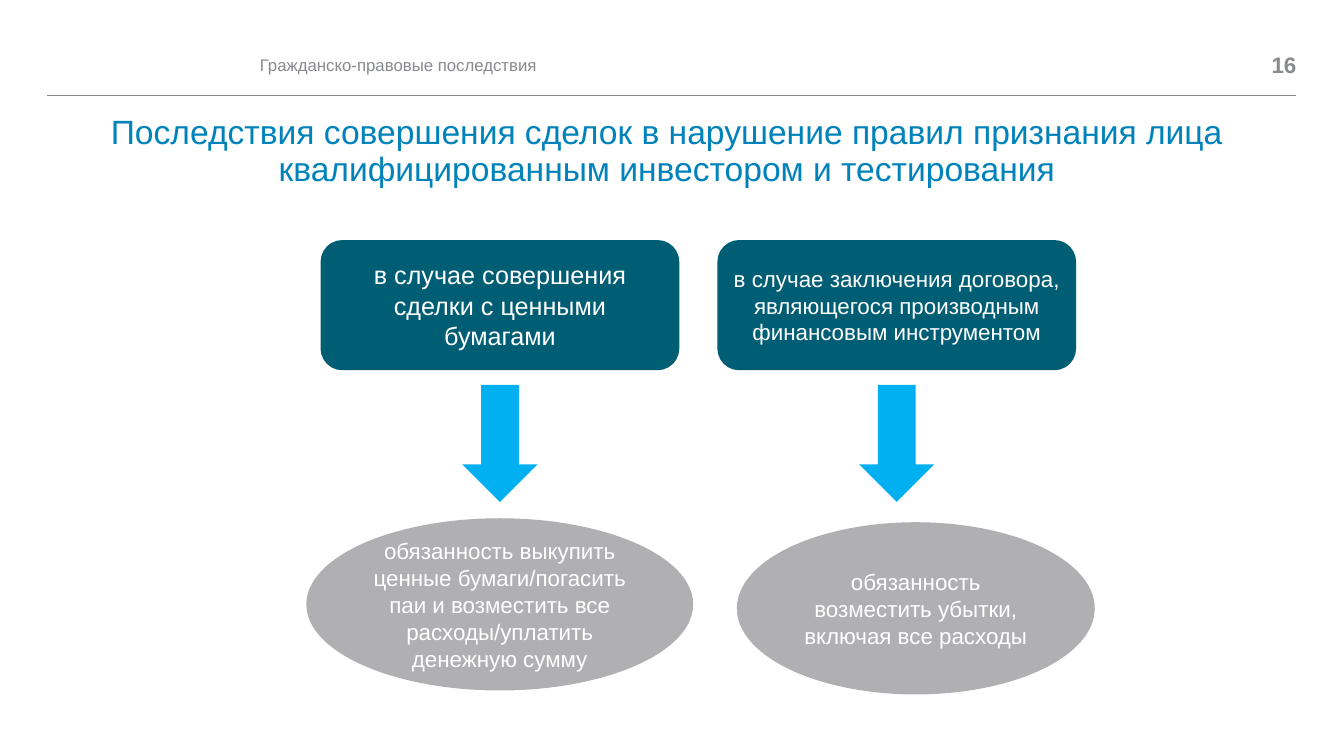
from lxml import etree
from pptx import Presentation
from pptx.dml.color import RGBColor
from pptx.enum.shapes import MSO_CONNECTOR, MSO_SHAPE
from pptx.enum.text import MSO_ANCHOR, MSO_AUTO_SIZE, PP_ALIGN
from pptx.oxml.ns import qn
from pptx.util import Cm, Pt

BLUE = RGBColor(0x00, 0x82, 0xBB)
TEAL = RGBColor(0x00, 0x5E, 0x74)
SKY = RGBColor(0x00, 0xB0, 0xF0)
SILVER = RGBColor(0xB0, 0xB0, 0xB3)
GRAY = RGBColor(0x88, 0x8A, 0x8D)
WHITE = RGBColor(0xFF, 0xFF, 0xFF)

BOX_LEFT, BOX_WIDTH, COLUMN_STEP = 8.08, 9.04, 10
ARROW_WIDTH = 1.9

# box text, box text size, ellipse text, ellipse (left, top, width)
CASES = [
    ("в случае совершения сделки с ценными бумагами", 18,
     "обязанность выкупить ценные бумаги/погасить паи и возместить все "
     "расходы/уплатить денежную сумму", (7.72, 13.06, 9.75)),
    ("в случае заключения договора, являющегося производным финансовым "
     "инструментом", 16,
     "обязанность возместить убытки, включая все расходы",
     (18.57, 13.16, 9.02)),
]


def set_attributes(target, values):
    for name, value in values.items():
        setattr(target, name, value)


def write_text(shape, text, size, color, align, bold=False):
    frame = shape.text_frame
    set_attributes(frame, {"word_wrap": True, "auto_size": MSO_AUTO_SIZE.NONE,
                           "vertical_anchor": MSO_ANCHOR.MIDDLE})
    paragraph = frame.paragraphs[0]
    paragraph.alignment = align
    run = paragraph.add_run()
    run.text = text
    set_attributes(run.font, {"name": "Arial", "size": Pt(size), "bold": bold})
    run.font.color.rgb = color


def remove_margins(shape):
    set_attributes(shape.text_frame, {f"margin_{side}": 0 for side in
                                      ("left", "top", "right", "bottom")})


def set_title(slide, text):
    title = slide.shapes.title
    set_attributes(title, {"left": Cm(1.07), "top": Cm(2.92),
                           "width": Cm(31.47), "height": Cm(2.31)})
    write_text(title, text, 24, BLUE, PP_ALIGN.CENTER)
    remove_margins(title)
    title.text_frame.vertical_anchor = MSO_ANCHOR.TOP
    title.text_frame.paragraphs[0].line_spacing = 0.9


def add_header_text(slide, left, width, text, size, align, bold=False):
    box = slide.shapes.add_textbox(Cm(left), Cm(1.19), Cm(width), Cm(0.89))
    write_text(box, text, size, GRAY, align, bold)
    remove_margins(box)


def add_header_rule(slide):
    rule = slide.shapes.add_connector(MSO_CONNECTOR.STRAIGHT,
                                      Cm(1.19), Cm(2.41), Cm(32.66), Cm(2.41))
    rule.line.color.rgb = GRAY
    rule.line.width = Pt(0.5)
    etree.SubElement(rule._element.spPr, qn("a:effectLst"))


def add_filled_shape(slide, kind, bounds, color):
    shape = slide.shapes.add_shape(kind, *map(Cm, bounds))
    shape.shadow.inherit = False
    shape.fill.solid()
    shape.fill.fore_color.rgb = color
    shape.line.fill.background()
    return shape


def add_case(slide, column, box_text, box_size, duty, duty_bounds):
    """Draw one column: the case, an arrow down, and the resulting duty."""
    left = BOX_LEFT + column * COLUMN_STEP
    box = add_filled_shape(slide, MSO_SHAPE.ROUNDED_RECTANGLE,
                           (left, 6.05, BOX_WIDTH, 3.28), TEAL)
    write_text(box, box_text, box_size, WHITE, PP_ALIGN.CENTER)

    arrow_left = left + (BOX_WIDTH - ARROW_WIDTH) / 2
    add_filled_shape(slide, MSO_SHAPE.DOWN_ARROW,
                     (arrow_left, 9.7, ARROW_WIDTH, 2.95), SKY)

    ellipse = add_filled_shape(slide, MSO_SHAPE.OVAL,
                               (*duty_bounds, 4.34), SILVER)
    write_text(ellipse, duty, 16, WHITE, PP_ALIGN.CENTER)


def main():
    presentation = Presentation()
    presentation.slide_width = Cm(33.87)
    presentation.slide_height = Cm(19.05)
    title_only = presentation.slide_layouts[5]
    slide = presentation.slides.add_slide(title_only)

    add_header_rule(slide)
    set_title(slide, "Последствия совершения сделок в нарушение правил "
                     "признания лица квалифицированным инвестором и "
                     "тестирования")
    add_header_text(slide, 6.55, 23.44, "Гражданско-правовые последствия", 12,
                    PP_ALIGN.LEFT)
    add_header_text(slide, 30.61, 2.06, "16", 16, PP_ALIGN.RIGHT, bold=True)
    for column, case in enumerate(CASES):
        add_case(slide, column, *case)

    presentation.save("out.pptx")


if __name__ == "__main__":
    main()
